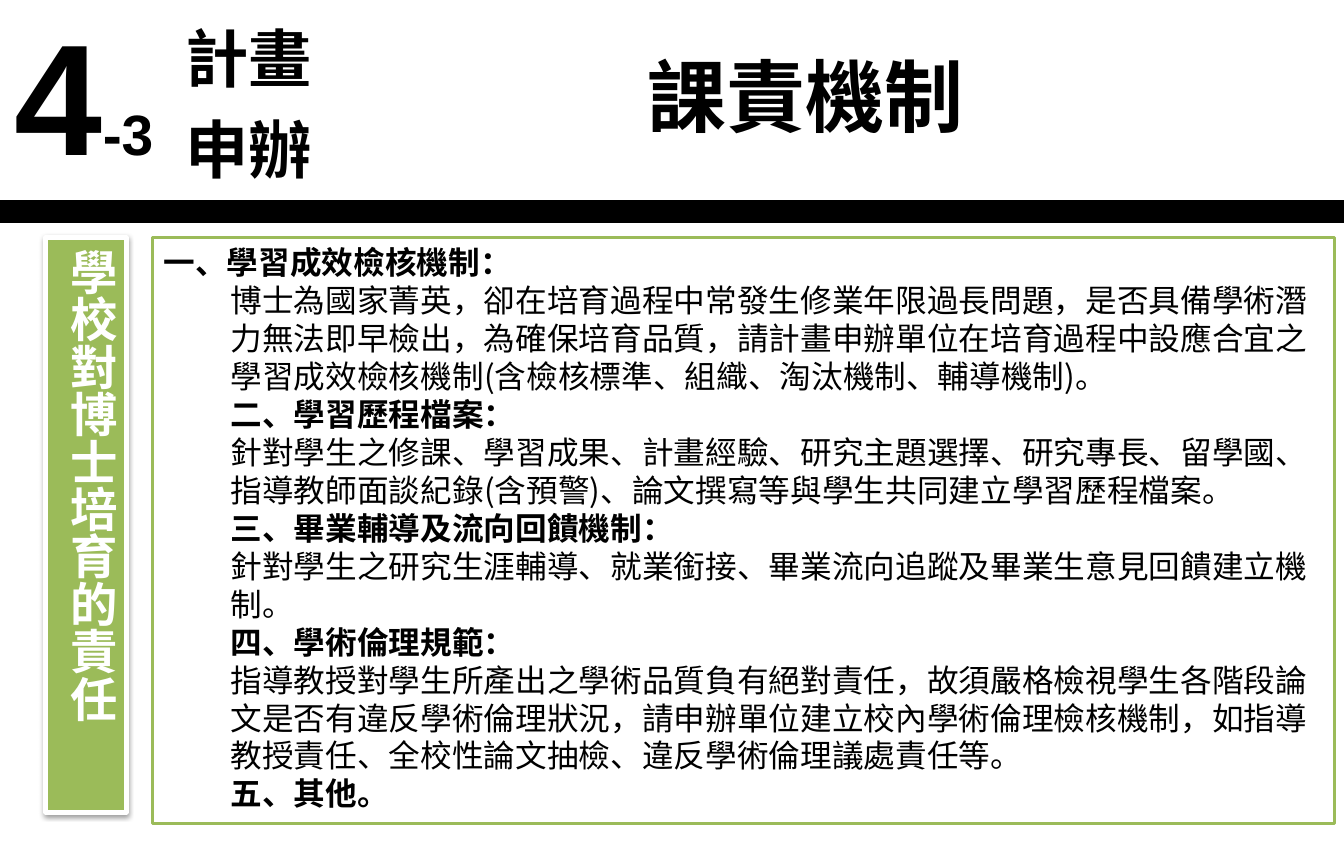
from lxml import etree
from pptx import Presentation
from pptx.dml.color import RGBColor
from pptx.enum.shapes import MSO_CONNECTOR, MSO_SHAPE
from pptx.enum.text import MSO_ANCHOR, PP_ALIGN
from pptx.oxml import parse_xml
from pptx.oxml.ns import nsdecls, qn
from pptx.util import Cm, Pt

RECTANGLE = MSO_SHAPE.RECTANGLE
STRAIGHT = MSO_CONNECTOR.STRAIGHT
LEFT = PP_ALIGN.LEFT
TOP, MIDDLE = MSO_ANCHOR.TOP, MSO_ANCHOR.MIDDLE

CJK_FONT, LATIN_FONT = "Noto Sans CJK SC", "Arial"
BLACK, WHITE, GREEN = "000000", "FFFFFF", "9BBB59"
SLIDE_WIDTH = 30

SECTIONS = [
    ("一、學習成效檢核機制：",
     "博士為國家菁英，卻在培育過程中常發生修業年限過長問題，是否具備學術潛力無法即早檢出，"
     "為確保培育品質，請計畫申辦單位在培育過程中設應合宜之學習成效檢核機制"
     "(含檢核標準、組織、淘汰機制、輔導機制)。"),
    ("二、學習歷程檔案：",
     "針對學生之修課、學習成果、計畫經驗、研究主題選擇、研究專長、留學國、"
     "指導教師面談紀錄(含預警)、論文撰寫等與學生共同建立學習歷程檔案。"),
    ("三、畢業輔導及流向回饋機制：",
     "針對學生之研究生涯輔導、就業銜接、畢業流向追蹤及畢業生意見回饋建立機制。"),
    ("四、學術倫理規範：",
     "指導教授對學生所產出之學術品質負有絕對責任，故須嚴格檢視學生各階段論文是否有違反"
     "學術倫理狀況，請申辦單位建立校內學術倫理檢核機制，如指導教授責任、全校性論文抽檢、"
     "違反學術倫理議處責任等。"),
    ("五、其他。", None),
]


def color(value):
    """Turn a hex string into a colour."""
    return RGBColor.from_string(value)


def style_font(font, size, name=CJK_FONT, fill=BLACK, bold=True):
    """Set size, typeface, colour and weight of a font."""
    font.size, font.bold, font.name = Pt(size), bold, name
    font.color.rgb = color(fill)
    east_asian = etree.SubElement(font._element if hasattr(font, "_element") else font._rPr, qn("a:ea"))
    east_asian.set("typeface", name)


def write_paragraph(paragraph, text, size, fill=BLACK, bold=True, spacing=None):
    """Fill a paragraph with evenly styled text."""
    paragraph.text = text
    paragraph.alignment = LEFT
    if spacing:
        paragraph.line_spacing = Pt(spacing)
    style_font(paragraph.font, size, fill=fill, bold=bold)


def add_panel(slide, left, top, width, height, fill, line, line_width):
    """Add a filled, outlined rectangle with text starting at the top."""
    panel = slide.shapes.add_shape(RECTANGLE, Cm(left), Cm(top), Cm(width), Cm(height))
    panel.shadow.inherit = False
    panel.fill.solid()
    panel.fill.fore_color.rgb = color(fill)
    panel.line.color.rgb = color(line)
    panel.line.width = Pt(line_width)
    panel.text_frame.word_wrap = True
    panel.text_frame.vertical_anchor = TOP
    return panel


def add_divider(slide, top):
    """Draw the thick rule below the header."""
    divider = slide.shapes.add_connector(STRAIGHT, 0, Cm(top), Cm(SLIDE_WIDTH), Cm(top))
    divider.line.color.rgb = color(BLACK)
    divider.line.width = Pt(15)
    etree.SubElement(divider._element.spPr, qn("a:effectLst"))


def add_title(slide, text):
    """Add the slide title."""
    title = slide.shapes.add_textbox(Cm(14.2), Cm(0.94), Cm(14.73), Cm(2.39))
    title.text_frame.word_wrap = True
    write_paragraph(title.text_frame.paragraphs[0], text, 50, spacing=60)


def add_header_table(slide, number, suffix, label):
    """Add the borderless table with the section number and its label."""
    table = slide.shapes.add_table(1, 2, Cm(0.08), 0, Cm(7.62), Cm(4.5)).table
    table.first_row = table.horz_banding = False
    for cell in table.iter_cells():
        cell.fill.background()
        cell.vertical_anchor = MIDDLE
        for side in ("a:lnL", "a:lnR", "a:lnT", "a:lnB"):
            border = etree.Element(qn(side))
            etree.SubElement(border, qn("a:noFill"))
            cell._tc.tcPr.insert(0, border)
        borders = cell._tc.tcPr
        borders[:4] = list(reversed(borders[:4]))
    number_paragraph = table.cell(0, 0).text_frame.paragraphs[0]
    for text, size in ((number, 100), (suffix, 36)):
        run = number_paragraph.add_run()
        run.text = text
        style_font(run.font, size, LATIN_FONT)
    write_paragraph(table.cell(0, 1).text_frame.paragraphs[0], label, 40)


def add_sections(slide):
    """Add the outlined panel listing every section."""
    frame = add_panel(slide, 3.4, 5.31, 26.39, 13.08, WHITE, GREEN, 2).text_frame
    lines = [(text, text is heading) for heading, body in SECTIONS
             for text in (heading, body) if text]
    for index, (text, bold) in enumerate(lines):
        paragraph = frame.add_paragraph() if index else frame.paragraphs[0]
        write_paragraph(paragraph, text, 20, bold=bold, spacing=24)
        if index:
            paragraph._p.get_or_add_pPr().set("marL", str(Cm(1.5)))


def add_side_banner(slide, text):
    """Add the green banner with vertical text and a soft shadow."""
    banner = add_panel(slide, 1.02, 5.31, 1.8, 12.83, GREEN, WHITE, 3)
    banner.text_frame._txBody.bodyPr.set("vert", "eaVert")
    write_paragraph(banner.text_frame.paragraphs[0], text, 30, WHITE, spacing=36)
    effects = banner._element.spPr.find(qn("a:effectLst"))
    effects.append(parse_xml(
        f'<a:outerShdw {nsdecls("a")} blurRad="{Pt(3.1)}" dist="{Pt(1.6)}" dir="5400000" rotWithShape="0">'
        f'<a:srgbClr val="{BLACK}"><a:alpha val="38000"/></a:srgbClr></a:outerShdw>'))


def main():
    """Build and save the slide."""
    presentation = Presentation()
    presentation.slide_width, presentation.slide_height = Cm(SLIDE_WIDTH), Cm(19.05)
    slide = presentation.slides.add_slide(presentation.slide_layouts[6])
    add_divider(slide, 4.72)
    add_title(slide, "課責機制")
    add_sections(slide)
    add_side_banner(slide, "學校對博士培育的責任")
    add_header_table(slide, "4", "-3", "計畫申辦")
    presentation.save("out.pptx")


if __name__ == "__main__":
    main()
